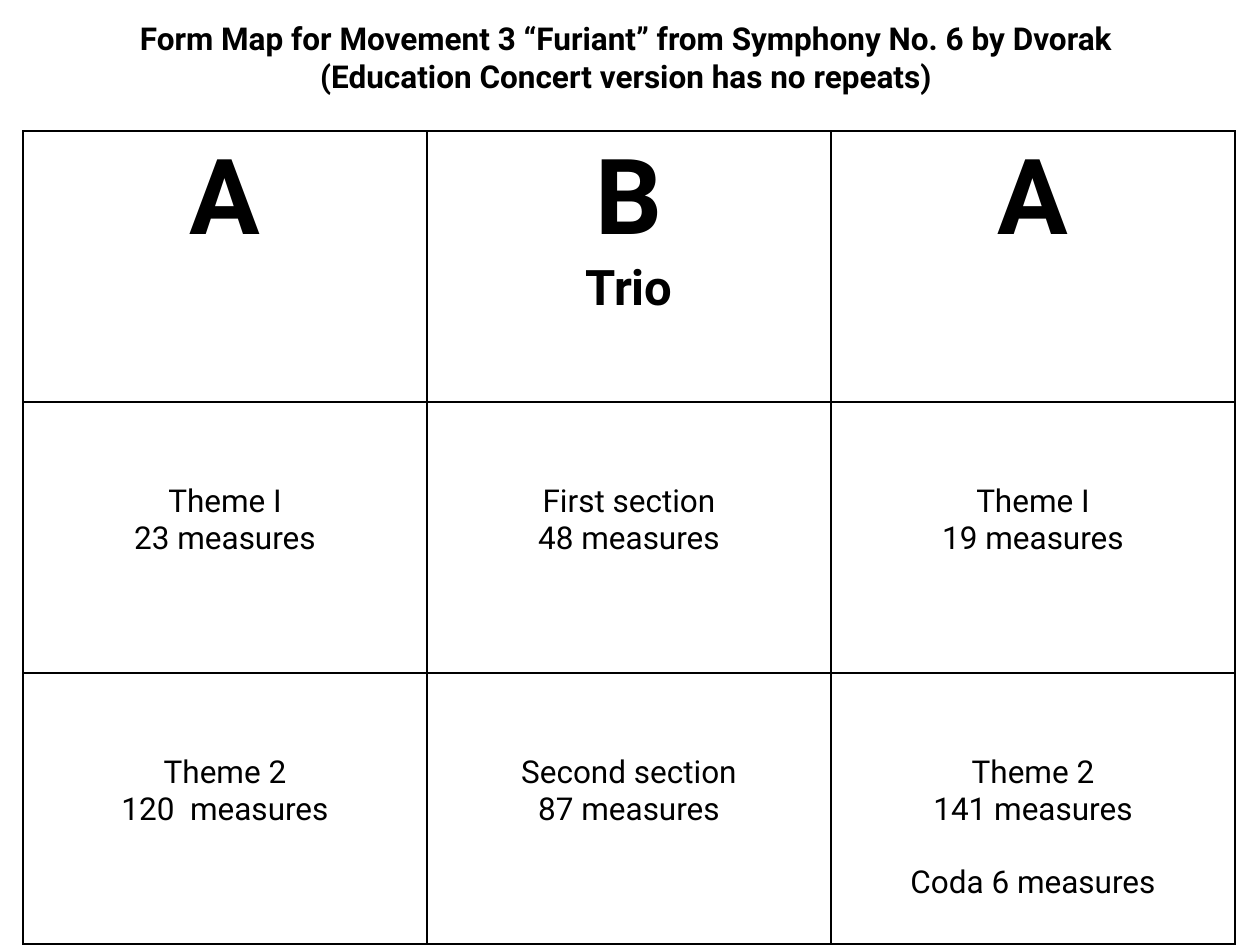
from lxml import etree
from pptx import Presentation
from pptx.dml.color import RGBColor
from pptx.enum.text import MSO_ANCHOR, MSO_AUTO_SIZE, PP_ALIGN
from pptx.oxml.ns import qn
from pptx.util import Pt

CENTER = PP_ALIGN.CENTER
TOP = MSO_ANCHOR.TOP
GROW = MSO_AUTO_SIZE.SHAPE_TO_FIT_TEXT
BLACK = RGBColor(0, 0, 0)
FONT = "Roboto"
SCALE = 914400 / 126

# Table geometry in px
LEFT, UP = 23, 131
COL, ROW = 404, 271
PAD, DROP = 6, 81

TITLE = [
    "Form Map for Movement 3 “Furiant” from Symphony No. 6 by Dvorak",
    "(Education Concert version has no repeats)",
]
HEADS = [["A"], ["B", "Trio"], ["A"]]
THEMES = [
    [
        ["Theme I", "23 measures"],
        ["First section", "48 measures"],
        ["Theme I", "19 measures"],
    ],
    [
        ["Theme 2", "120  measures"],
        ["Second section", "87 measures"],
        ["Theme 2", "141 measures", "Coda 6 measures"],
    ],
]


def px(num):
    return round(num * SCALE)


def add_line(frame, text, size=18, bold=False, gap=0):
    """Fill the empty first paragraph, or append a new one."""
    para = frame.paragraphs[0]
    if para.runs:
        para = frame.add_paragraph()
    para.alignment = CENTER
    para.space_before = Pt(gap)
    run = para.add_run()
    run.text = text
    font = run.font
    font.name, font.size, font.bold = FONT, Pt(size), bold
    font.color.rgb = BLACK


def add_title(slide):
    box = slide.shapes.add_textbox(px(114), px(13), px(1024), px(89))
    frame = box.text_frame
    frame.word_wrap = False
    frame.auto_size = GROW
    for text in TITLE:
        add_line(frame, text, bold=True)


def set_border(cell):
    props = cell._tc.get_or_add_tcPr()
    for pos, side in enumerate(("a:lnL", "a:lnR", "a:lnT", "a:lnB")):
        line = etree.Element(qn(side), w=str(Pt(1)))
        fill = etree.SubElement(line, qn("a:solidFill"))
        etree.SubElement(fill, qn("a:srgbClr"), val=str(BLACK))
        props.insert(pos, line)


def style_cell(cell, top):
    cell.fill.background()
    cell.vertical_anchor = TOP
    cell.margin_top = px(top)
    set_border(cell)


def add_grid(slide):
    frame = slide.shapes.add_table(
        3, 3, px(LEFT), px(UP), px(3 * COL), px(3 * ROW))
    table = frame.table
    table.first_row = table.horz_banding = False
    for col in table.columns:
        col.width = px(COL)
    for row in table.rows:
        row.height = px(ROW)

    # Section letters, with a smaller subtitle
    for col, lines in enumerate(HEADS):
        cell = table.cell(0, col)
        style_cell(cell, PAD)
        for text, size in zip(lines, (60, 28)):
            add_line(cell.text_frame, text, size=size, bold=True)

    # Themes and lengths; a third line stands one line apart
    for row, cells in enumerate(THEMES, 1):
        for col, lines in enumerate(cells):
            cell = table.cell(row, col)
            style_cell(cell, DROP)
            for text, gap in zip(lines, (0, 0, 21)):
                add_line(cell.text_frame, text, gap=gap)


def main():
    deck = Presentation()
    deck.slide_width, deck.slide_height = px(1260), px(945)
    slide = deck.slides.add_slide(deck.slide_layouts[6])
    add_title(slide)
    add_grid(slide)
    deck.save("out.pptx")


if __name__ == "__main__":
    main()
